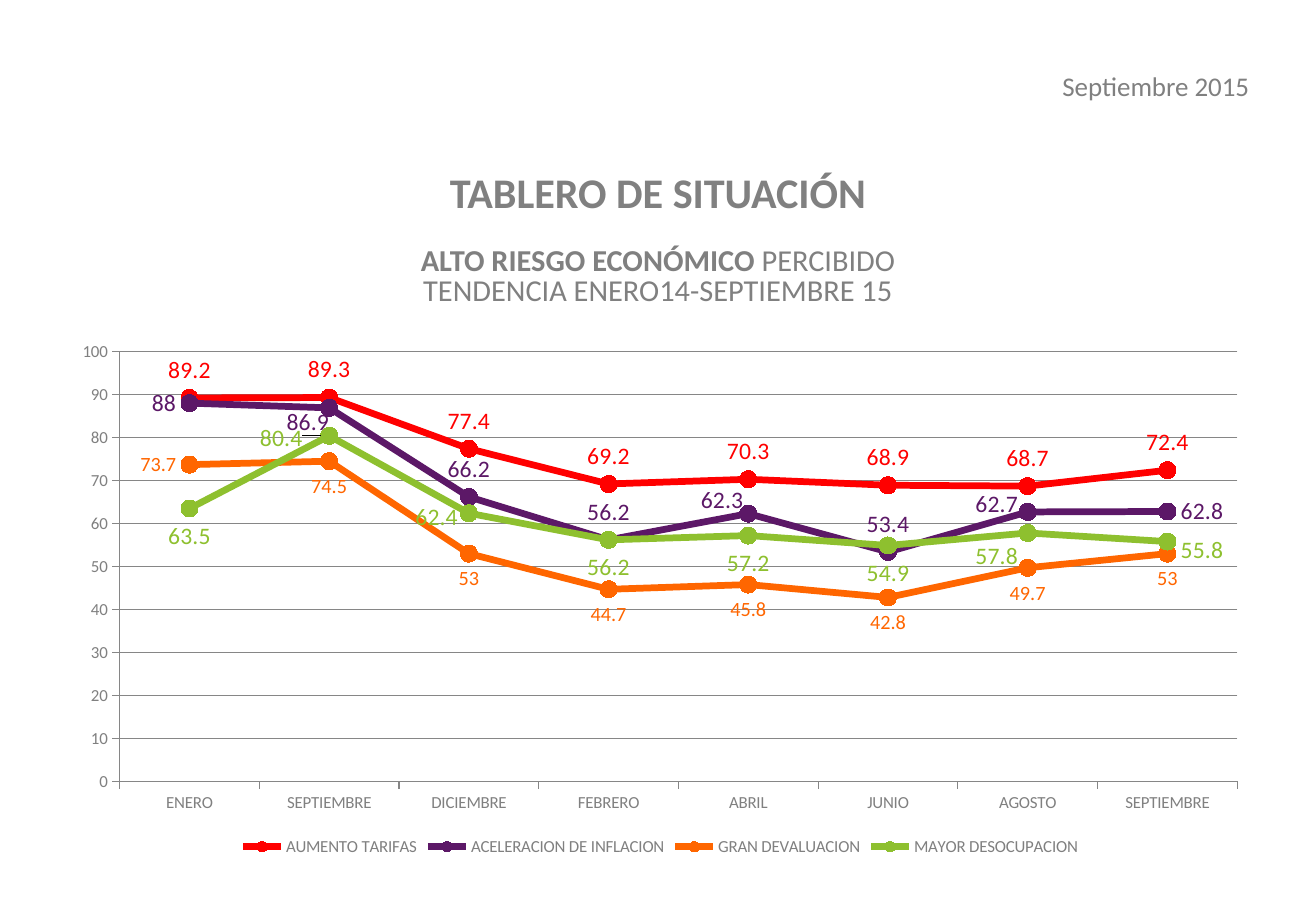
from lxml.etree import SubElement
from pptx import Presentation
from pptx.chart.data import CategoryChartData
from pptx.dml.color import RGBColor
from pptx.enum.chart import (XL_CHART_TYPE, XL_LABEL_POSITION as Pos,
                             XL_LEGEND_POSITION, XL_MARKER_STYLE, XL_TICK_MARK)
from pptx.enum.text import PP_ALIGN as Align
from pptx.oxml.ns import qn
from pptx.util import Inches, Pt

WIDTH, HEIGHT = 10.83, 7.5
FONT = "Calibri"
COLORS = {"text": "808080", "grid": "868686", "tarifas": "FF0000",
          "inflacion": "5C1867", "devaluacion": "FF6600", "desocupacion": "8EC02F"}
MONTHS = ["ENERO", "SEPTIEMBRE", "DICIEMBRE", "FEBRERO",
          "ABRIL", "JUNIO", "AGOSTO", "SEPTIEMBRE"]
# Moved labels: point index -> (side, shift right, shift down), in inches
RISKS = [
    ("AUMENTO TARIFAS", "tarifas", [89.2, 89.3, 77.4, 69.2, 70.3, 68.9, 68.7, 72.4],
     Pos.ABOVE, 14, {}),
    ("ACELERACION DE INFLACION", "inflacion",
     [88, 86.9, 66.2, 56.2, 62.3, 53.4, 62.7, 62.8], Pos.ABOVE, 14,
     {0: (Pos.LEFT, 0, 0), 1: (Pos.LEFT, 0.11, 0.12), 4: (Pos.LEFT, 0.07, -0.11),
      6: (Pos.LEFT, 0.03, -0.06), 7: (Pos.RIGHT, 0, 0)}),
    ("GRAN DEVALUACION", "devaluacion", [73.7, 74.5, 53, 44.7, 45.8, 42.8, 49.7, 53],
     Pos.BELOW, 12, {0: (Pos.LEFT, 0, 0)}),
    ("MAYOR DESOCUPACION", "desocupacion",
     [63.5, 80.4, 62.4, 56.2, 57.2, 54.9, 57.8, 55.8], Pos.BELOW, 14,
     {1: (Pos.LEFT, -0.11, 0.02), 2: (Pos.LEFT, 0.02, 0.03),
      6: (Pos.LEFT, 0.03, 0.19), 7: (Pos.RIGHT, 0, 0.07)}),
]


def color(name):
    return RGBColor.from_string(COLORS[name])


def style_font(font, size, name="text", bold=False):
    font.name, font.size, font.bold = FONT, Pt(size), bold
    font.color.rgb = color(name)


def style_line(line, name, width):
    line.color.rgb = color(name)
    line.width = Pt(width)


def add_text(slide, box, paragraphs, align, spacing=1.0):
    """Each paragraph is (space before, [(text, size, bold), ...])."""
    frame = slide.shapes.add_textbox(*map(Inches, box)).text_frame
    frame.word_wrap = True
    frame.margin_left = frame.margin_right = Inches(0.1)
    frame.margin_top = frame.margin_bottom = 0
    for index, (before, runs) in enumerate(paragraphs):
        paragraph = frame.add_paragraph() if index else frame.paragraphs[0]
        paragraph.alignment, paragraph.line_spacing = align, spacing
        paragraph.space_before = Pt(before)
        for text, size, bold in runs:
            run = paragraph.add_run()
            run.text = text
            style_font(run.font, size, bold=bold)


def set_layout(parent, index, **settings):
    """Put a manual layout into a chart element as its child number index."""
    for old in parent.findall(qn("c:layout")):
        parent.remove(old)
    layout = SubElement(parent, qn("c:layout"))
    manual = SubElement(layout, qn("c:manualLayout"))
    for tag, value in settings.items():
        SubElement(manual, qn(f"c:{tag}")).set("val", str(value))
    parent.insert(index, layout)


def style_series(series, risk, box):
    _, name, _, side, size, moved = risk
    series.smooth = False
    style_line(series.format.line, name, 4)
    series.marker.style, series.marker.size = XL_MARKER_STYLE.CIRCLE, 10
    series.marker.format.fill.solid()
    series.marker.format.fill.fore_color.rgb = color(name)
    style_line(series.marker.format.line, name, 0.75)
    labels = series.data_labels
    labels.show_value, labels.position = True, side
    style_font(labels.font, size, name)
    for index, (point_side, right, down) in moved.items():
        label = series.points[index].data_label
        style_font(label.font, size, name)
        label.position = point_side
        if right or down:
            set_layout(label._get_or_add_dLbl(), 1, x=right / box[2], y=down / box[3])


def style_axis(axis):
    axis.major_tick_mark, axis.minor_tick_mark = XL_TICK_MARK.OUTSIDE, XL_TICK_MARK.NONE
    style_line(axis.format.line, "grid", 0.75)
    style_font(axis.tick_labels.font, 10)


def add_risk_chart(slide, box):
    data = CategoryChartData()
    data.categories = MONTHS
    for title, _, values, *_ in RISKS:
        data.add_series(title, values)
    chart = slide.shapes.add_chart(XL_CHART_TYPE.LINE_MARKERS, *map(Inches, box), data).chart
    style_font(chart.font, 10)
    chart.has_title = False
    chart.has_legend = True
    chart.legend.position = XL_LEGEND_POSITION.BOTTOM
    chart.legend.include_in_layout = False
    style_font(chart.legend.font, 10)
    style_axis(chart.category_axis)
    scale = chart.value_axis
    style_axis(scale)
    scale.minimum_scale, scale.maximum_scale, scale.major_unit = 0, 100, 10
    scale.has_major_gridlines = True
    style_line(scale.major_gridlines.format.line, "grid", 0.75)
    plot = chart.plots[0]
    plot.vary_by_categories = False
    for series, risk in zip(plot.series, RISKS):
        style_series(series, risk, box)
    set_layout(chart._chartSpace.chart.plotArea, 0, layoutTarget="inner",
               xMode="edge", yMode="edge", x=0.05, y=0.04, w=0.93, h=0.81)


def main():
    deck = Presentation()
    deck.slide_width, deck.slide_height = Inches(WIDTH), Inches(HEIGHT)
    slide = deck.slides.add_slide(deck.slide_layouts[6])
    add_text(slide, (0, 1.45, WIDTH, 1.2), [
        (0, [("TABLERO DE SITUACIÓN", 25, True)]),
        (19, [("ALTO RIESGO ECONÓMICO ", 18, True), ("PERCIBIDO", 18, False)]),
        (0, [("TENDENCIA ENERO14-SEPTIEMBRE 15", 18, False)]),
    ], Align.CENTER, 0.8)
    add_risk_chart(slide, (0.49, 2.72, 9.89, 4.37))
    add_text(slide, (8.38, 0.57, 2, 0.32),
             [(0, [("Septiembre 2015", 16, False)])], Align.RIGHT)
    deck.save("out.pptx")


if __name__ == "__main__":
    main()
